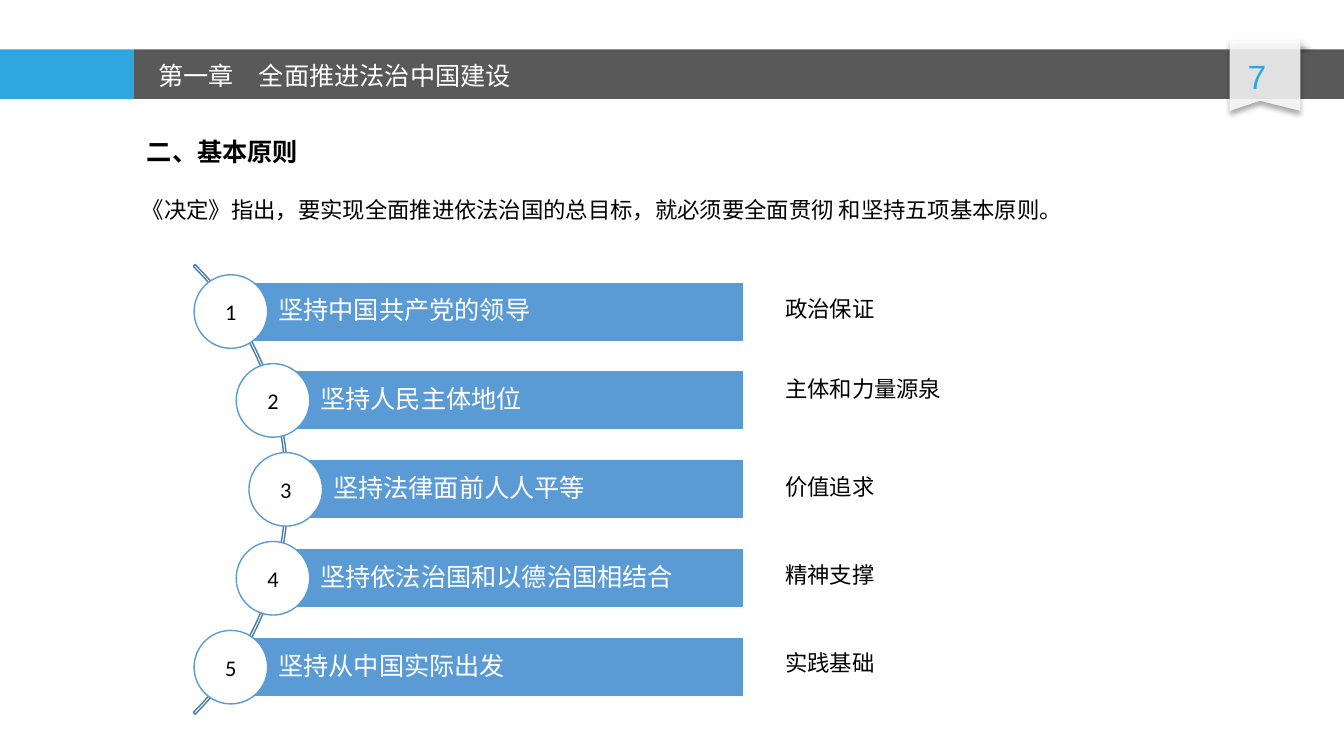
from dataclasses import dataclass
from math import sqrt

from lxml.etree import SubElement
from pptx import Presentation
from pptx.dml.color import RGBColor
from pptx.enum.shapes import MSO_SHAPE as Preset
from pptx.enum.text import MSO_ANCHOR as Anchor, PP_ALIGN as Align
from pptx.oxml.ns import qn
from pptx.shapes.autoshape import Shape
from pptx.slide import Slide
from pptx.util import Emu, Inches, Pt

SKY = RGBColor(0x2E, 0xA7, 0xE0)
GRAPHITE = RGBColor(0x59, 0x59, 0x59)
BLUE = RGBColor(0x5B, 0x9B, 0xD5)
ARC_BLUE = RGBColor(0x49, 0x7C, 0xAB)
PALE = RGBColor(0xF8, 0xF8, 0xF8)
WHITE = RGBColor(0xFF, 0xFF, 0xFF)
BLACK = RGBColor(0x00, 0x00, 0x00)
CJK_FONT = "Noto Sans CJK SC"

# Grid of square cells: 133.33 columns by 75 rows
CELL = Inches(0.1)
COLUMNS, ROWS = 133.33, 75

# Geometry of the list, in cells
ARC_X, ARC_Y, ARC_SIZE = -2.95, 48.55, 63.1
ORBIT = 31.3
PITCH = 8.82
BAR_HEIGHT, BAR_RIGHT = 5.9, 73.8
CIRCLE = 7.3


@dataclass(frozen=True)
class Box:
    left: float
    top: float
    width: float
    height: float


@dataclass(frozen=True)
class TextStyle:
    size: float
    color: RGBColor = BLACK
    font: str = "Calibri"
    bold: bool = False
    align: Align = Align.LEFT
    indent: float = 0


@dataclass(frozen=True)
class Label:
    text: str
    box: Box
    style: TextStyle


@dataclass(frozen=True)
class Principle:
    text: str
    role: str
    role_top: float


NOTE = TextStyle(16)
NUMBER = TextStyle(16, align=Align.CENTER)
BAR_TEXT = TextStyle(18, WHITE)

LABELS = [
    Label("7", Box(119.6, 5.1, 10.2, 5), TextStyle(24, SKY, "Arial", align=Align.CENTER)),
    Label("第一章　全面推进法治中国建设", Box(14.7, 5.5, 50.4, 4), TextStyle(18, WHITE, CJK_FONT)),
    Label("二、基本原则", Box(13.6, 13, 53.1, 4), TextStyle(18, bold=True)),
    Label("《决定》指出，要实现全面推进依法治国的总目标，就必须要全面贯彻 和坚持五项基本原则。",
          Box(8.1, 19, 117, 3.7), TextStyle(16, indent=5)),
]
PRINCIPLES = [
    Principle("坚持中国共产党的领导", "政治保证", 28.8),
    Principle("坚持人民主体地位", "主体和力量源泉", 36.7),
    Principle("坚持法律面前人人平等", "价值追求", 46.4),
    Principle("坚持依法治国和以德治国相结合", "精神支撑", 55.2),
    Principle("坚持从中国实际出发", "实践基础", 63.9),
]


def cells(count: float) -> Emu:
    return Emu(round(count * CELL))


def frame(box: Box) -> list[Emu]:
    return [cells(value) for value in (box.left, box.top, box.width, box.height)]


def paint(shape: Shape, fill: RGBColor | None, line: RGBColor | None = None) -> None:
    shape.shadow.inherit = False
    if fill is None:
        shape.fill.background()
    else:
        shape.fill.solid()
        shape.fill.fore_color.rgb = fill
    if line is None:
        shape.line.fill.background()
    else:
        shape.line.color.rgb = line
        shape.line.width = Pt(1)


def add_preset(slide: Slide, preset: Preset, box: Box, fill: RGBColor | None,
               line: RGBColor | None = None) -> Shape:
    shape = slide.shapes.add_shape(preset, *frame(box))
    paint(shape, fill, line)
    return shape


def write(shape: Shape, text: str, style: TextStyle) -> None:
    text_frame = shape.text_frame
    text_frame.word_wrap = True
    text_frame.text = text
    paragraph = text_frame.paragraphs[0]
    paragraph.alignment = style.align
    if style.indent:
        paragraph._p.get_or_add_pPr().set("indent", str(cells(style.indent)))
    run = paragraph.runs[0]
    font = run.font
    font.size, font.bold, font.name = Pt(style.size), style.bold, style.font
    font.color.rgb = style.color
    SubElement(font._element, qn("a:ea")).set("typeface", CJK_FONT)


def add_label(slide: Slide, label: Label) -> None:
    write(slide.shapes.add_textbox(*frame(label.box)), label.text, label.style)


def make_paper(shape: Shape, fill: RGBColor) -> None:
    """Translucent fill with a soft shadow below."""
    paint(shape, fill)
    properties = shape._element.spPr
    color = properties.find(qn("a:solidFill"))[0]
    SubElement(color, qn("a:alpha")).set("val", "85000")
    shadow = SubElement(properties.find(qn("a:effectLst")), qn("a:outerShdw"),
                        blurRad=str(Pt(4)), dist=str(Pt(3)), dir="5400000",
                        algn="t", rotWithShape="0")
    black = SubElement(shadow, qn("a:srgbClr"), val="000000")
    SubElement(black, qn("a:alpha")).set("val", "40000")


def add_header(slide: Slide) -> None:
    add_preset(slide, Preset.RECTANGLE, Box(0, 4.9, 13.3, 4.9), SKY)
    add_preset(slide, Preset.RECTANGLE, Box(13.3, 4.9, COLUMNS - 13.3, 4.9), GRAPHITE)

    # Page ribbon with its folded corner
    fold = add_preset(slide, Preset.RIGHT_TRIANGLE, Box(128.9, 3.8, 1.2, 0.8), PALE)
    make_paper(fold, PALE)
    builder = slide.shapes.build_freeform(121.5, 10.9, scale=float(CELL))
    builder.add_line_segments([(121.5, 4), (128.9, 4), (128.9, 10.9), (125.1, 10.3)])
    make_paper(builder.convert_to_shape(), WHITE)


def add_principle(slide: Slide, index: int, principle: Principle) -> None:
    # Circle centres lie on the arc
    offset = (index - (len(PRINCIPLES) - 1) / 2) * PITCH
    x, y = ARC_X + sqrt(ORBIT ** 2 - offset ** 2), ARC_Y + offset

    bar = add_preset(slide, Preset.RECTANGLE,
                     Box(x, y - BAR_HEIGHT / 2, BAR_RIGHT - x, BAR_HEIGHT), BLUE, WHITE)
    write(bar, principle.text, BAR_TEXT)
    bar.text_frame.margin_left = cells(4.7)
    bar.text_frame.vertical_anchor = Anchor.MIDDLE
    bar.text_frame.paragraphs[0].line_spacing = 0.9

    circle = add_preset(slide, Preset.OVAL,
                        Box(x - CIRCLE / 2, y - CIRCLE / 2, CIRCLE, CIRCLE), WHITE, BLUE)
    write(circle, str(index + 1), NUMBER)
    circle.text_frame.vertical_anchor = Anchor.MIDDLE

    add_label(slide, Label(principle.role, Box(76.9, principle.role_top, 32.2, 3.7), NOTE))


def main() -> None:
    presentation = Presentation()
    presentation.slide_width, presentation.slide_height = cells(COLUMNS), cells(ROWS)
    slide = presentation.slides.add_slide(presentation.slide_layouts[6])

    # Header and introduction
    add_header(slide)
    for label in LABELS:
        add_label(slide, label)

    # Arc and the principles along it
    half = ARC_SIZE / 2
    arc = add_preset(slide, Preset.BLOCK_ARC,
                     Box(ARC_X - half, ARC_Y - half, ARC_SIZE, ARC_SIZE), None, ARC_BLUE)
    for position, value in enumerate((189, 27, 0.004)):
        arc.adjustments[position] = value
    for index, principle in enumerate(PRINCIPLES):
        add_principle(slide, index, principle)

    presentation.save("out.pptx")


if __name__ == "__main__":
    main()
